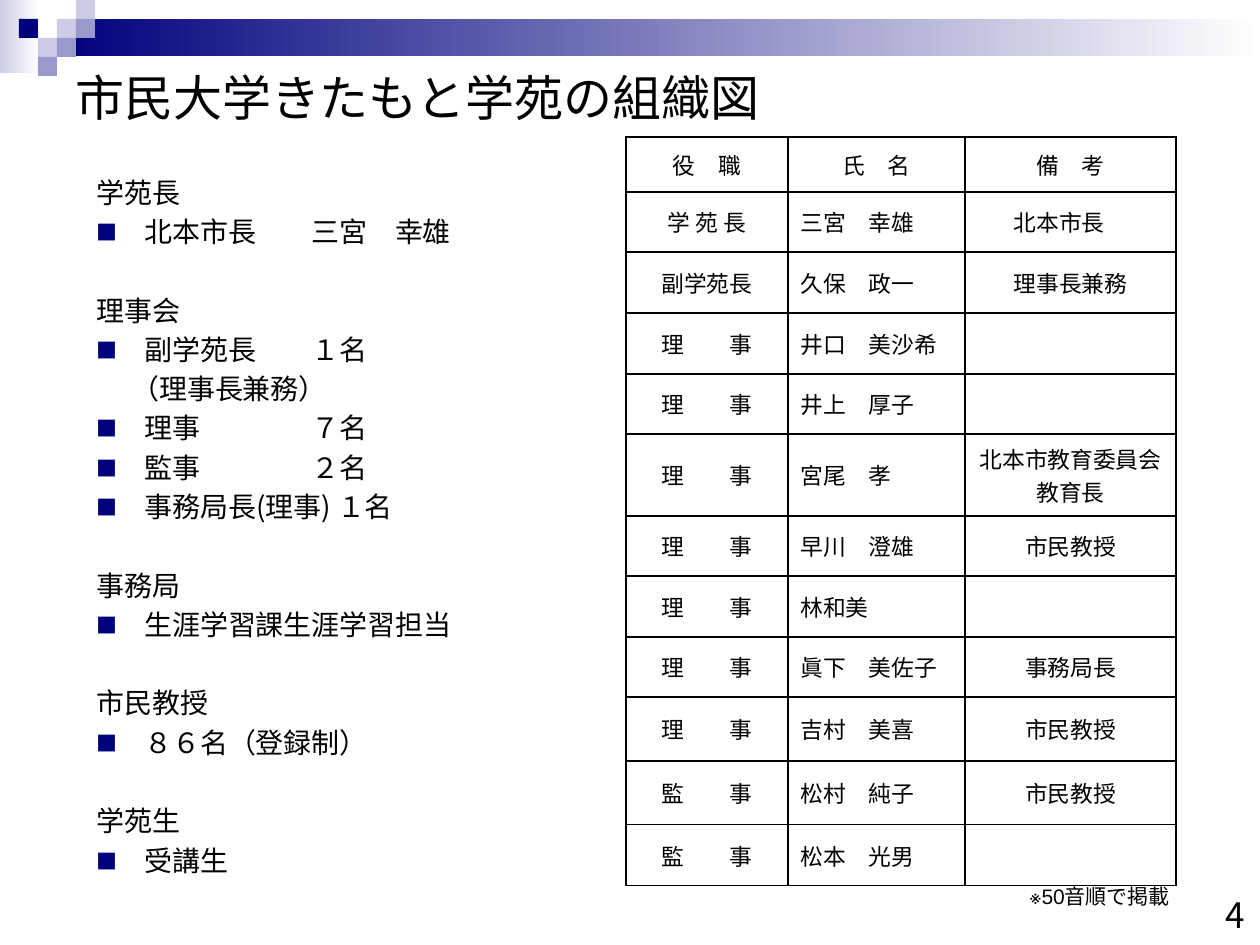
from dataclasses import dataclass
from lxml import etree
from pptx import Presentation, util as u
from pptx.dml.color import RGBColor
from pptx.enum import shapes, text
from pptx.oxml.ns import qn

# Content
TITLE = "市民大学きたもと学苑の組織図"
GROUPS = [
    ("学苑長", ["北本市長\t三宮　幸雄"]),
    ("理事会", ["副学苑長\t１名", "（理事長兼務）", "理事\t７名", "監事\t２名", "事務局長(理事) １名"]),
    ("事務局", ["生涯学習課生涯学習担当"]),
    ("市民教授", ["８６名（登録制）"]),
    ("学苑生", ["受講生"]),
]
MEMBERS = [
    ("役　職", "氏　名", "備　考"),
    ("学 苑 長", "三宮　幸雄", "北本市長　"),
    ("副学苑長", "久保　政一", "理事長兼務"),
    ("理　　事", "井口　美沙希", ""),
    ("理　　事", "井上　厚子", ""),
    ("理　　事", "宮尾　孝", "北本市教育委員会教育長"),
    ("理　　事", "早川　澄雄", "市民教授"),
    ("理　　事", "林和美", ""),
    ("理　　事", "眞下　美佐子", "事務局長"),
    ("理　　事", "吉村　美喜", "市民教授"),
    ("監　　事", "松村　純子", "市民教授"),
    ("監　　事", "松本　光男", ""),
]
NOTE = "※50音順で掲載"
PAGE = "4"

# Layout, in px
SLIDE = (1260, 945)
COLUMNS = [162, 177, 211]
ROWS = [55, 60, 61, 61, 60, 82, 60, 61, 60, 64, 64, 61]
HANG, SUB_INDENT, TAB = 48, 35, 215
TILE = 19


@dataclass(frozen=True)
class Theme:
    navy: str = "00007D"
    mid: str = "9999CC"
    pale: str = "CCCCE6"
    white: str = "FFFFFF"
    ink: str = "000000"
    latin: str = "Arial"
    cjk: str = "Noto Sans CJK JP"
    title: int = 28
    body: int = 16
    cell: int = 13
    note: int = 12
    page: int = 20
    line: float = 19.26
    gap: float = 3.2


T = Theme()
# Mosaic tiles: column, row, colour
TILES = [(3, 1, T.pale), (4, 0, T.pale), (4, 1, T.mid), (2, 2, T.pale),
         (1, 1, T.navy), (3, 2, T.mid), (2, 3, T.mid)]


def px(n):
    return u.Emu(round(n * 914400 / 126))


def rgb(code):
    return RGBColor.from_string(code)


def add_run(paragraph, words, size, font=T.cjk):
    run = paragraph.add_run()
    run.text = words
    run.font.size = u.Pt(size)
    run.font.name = font
    run.font.color.rgb = rgb(T.ink)
    etree.SubElement(run._r.get_or_add_rPr(), qn("a:ea"), typeface=T.cjk)


def add_block(slide, left, top, width, height):
    frame = slide.shapes.add_textbox(px(left), px(top), px(width), px(height)).text_frame
    frame.word_wrap = True
    return frame


def add_rect(slide, left, top, width, height, *colours):
    rect = slide.shapes.add_shape(shapes.MSO_SHAPE.RECTANGLE,
                                  px(left), px(top), px(width), px(height))
    rect.shadow.inherit = False
    rect.line.fill.background()
    if len(colours) == 1:
        rect.fill.solid()
        rect.fill.fore_color.rgb = rgb(colours[0])
    else:
        rect.fill.gradient()
        rect.fill.gradient_angle = 0
        for stop, colour in zip(rect.fill.gradient_stops, colours):
            stop.color.rgb = rgb(colour)


def indent(paragraph, margin, first, bullet=False):
    props = paragraph._p.get_or_add_pPr()
    props.set("marL", str(px(margin)))
    props.set("indent", str(px(first)))
    if bullet:
        colour = etree.SubElement(props, qn("a:buClr"))
        etree.SubElement(colour, qn("a:srgbClr"), val=T.navy)
        etree.SubElement(props, qn("a:buSzPct"), val="75000")
        etree.SubElement(props, qn("a:buFont"), typeface=T.cjk)
        etree.SubElement(props, qn("a:buChar"), char="■")
        tabs = etree.SubElement(props, qn("a:tabLst"))
        etree.SubElement(tabs, qn("a:tab"), pos=str(px(TAB)), algn="l")


def add_border(cell):
    props = cell._tc.get_or_add_tcPr()
    for place, side in enumerate(("a:lnL", "a:lnR", "a:lnT", "a:lnB")):
        edge = etree.Element(qn(side), w=str(u.Pt(1)))
        fill = etree.SubElement(edge, qn("a:solidFill"))
        etree.SubElement(fill, qn("a:srgbClr"), val=T.ink)
        props.insert(place, edge)


def add_outline(slide):
    frame = add_block(slide, 84, 169, 397, 743)
    lines = []
    for heading, items in GROUPS:
        lines += [(heading, True)] + [(item, False) for item in items]
    for i, (words, is_heading) in enumerate(lines):
        paragraph = frame.add_paragraph() if i else frame.paragraphs[0]
        paragraph.line_spacing = u.Pt(T.line)
        # A heading after the first leaves one line free above it
        paragraph.space_before = u.Pt(T.gap * 2 + T.line if is_heading and i else T.gap)
        if is_heading:
            indent(paragraph, HANG, -HANG)
        elif words.startswith("（"):
            indent(paragraph, SUB_INDENT, 0)
        else:
            indent(paragraph, HANG, -HANG, bullet=True)
        add_run(paragraph, words, T.body)


def add_members(slide):
    table = slide.shapes.add_table(len(ROWS), len(COLUMNS), px(626), px(137),
                                   px(sum(COLUMNS)), px(sum(ROWS))).table
    table.first_row = table.horz_banding = False
    for column, width in zip(table.columns, COLUMNS):
        column.width = px(width)
    for r, member in enumerate(MEMBERS):
        table.rows[r].height = px(ROWS[r])
        for c, words in enumerate(member):
            cell = table.cell(r, c)
            cell.fill.background()
            add_border(cell)
            cell.vertical_anchor = text.MSO_ANCHOR.MIDDLE
            paragraph = cell.text_frame.paragraphs[0]
            is_name = r > 0 and c == 1
            paragraph.alignment = text.PP_ALIGN.JUSTIFY if is_name else text.PP_ALIGN.CENTER
            if words:
                add_run(paragraph, words, T.cell)


def main():
    deck = Presentation()
    deck.slide_width, deck.slide_height = map(px, SLIDE)
    slide = deck.slides.add_slide(deck.slide_layouts[6])

    # Header band and mosaic
    add_rect(slide, 0, 0, 39, 73, T.pale, T.white)
    add_rect(slide, 57, 19, 1203, 37, T.navy, T.white)
    for column, row, colour in TILES:
        add_rect(slide, column * TILE, row * TILE, TILE, TILE, colour)

    # Title
    title = add_block(slide, 63, 63, 1134, 68)
    title.vertical_anchor = text.MSO_ANCHOR.MIDDLE
    add_run(title.paragraphs[0], TITLE, T.title, T.latin)

    # Outline, member table, footer
    add_outline(slide)
    add_members(slide)
    add_run(add_block(slide, 1213, 887, 41, 55).paragraphs[0], PAGE, T.page)
    add_run(add_block(slide, 1017, 877, 198, 38).paragraphs[0], NOTE, T.note, T.latin)
    deck.save("out.pptx")


if __name__ == "__main__":
    main()
